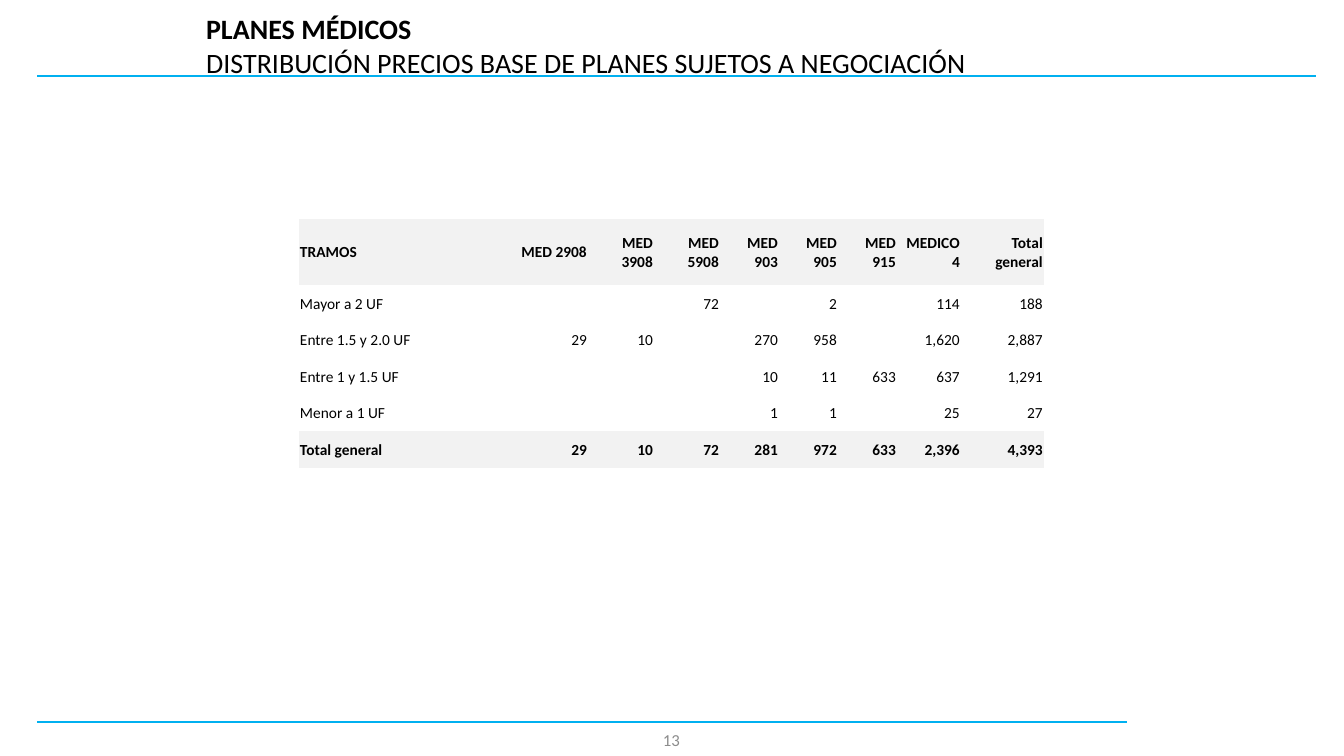
import pptx
import pptx.util
import pptx.dml.color
import pptx.enum.shapes
import pptx.enum.text
import pptx.oxml
import pptx.oxml.ns

BLACK = pptx.dml.color.RGBColor(0x00, 0x00, 0x00)
GREY = pptx.dml.color.RGBColor(0x8C, 0x8C, 0x8C)
PALE = pptx.dml.color.RGBColor(0xF2, 0xF2, 0xF2)
CYAN = pptx.dml.color.RGBColor(0x00, 0xB0, 0xF0)

ALIGN = pptx.enum.text.PP_ALIGN
MIDDLE = pptx.enum.text.MSO_ANCHOR.MIDDLE
NO_STYLE_NO_GRID = "{2D5ABB26-0587-4C30-8999-92F81FD0307C}"
EMU_PER_PX = 914400 / 100.8

COLUMN_WIDTHS = [141, 148, 66, 66, 59, 59, 59, 64, 83]
ROW_HEIGHTS = [66, 37, 36, 37, 36, 37]
PRICE_ROWS = [
    ["TRAMOS", "MED 2908", "MED 3908", "MED 5908", "MED 903", "MED 905",
     "MED 915", "MEDICO 4", "Total general"],
    ["Mayor a 2 UF", "", "", "72", "", "2", "", "114", "188"],
    ["Entre 1.5 y 2.0 UF", "29", "10", "", "270", "958", "", "1,620", "2,887"],
    ["Entre 1 y 1.5 UF", "", "", "", "10", "11", "633", "637", "1,291"],
    ["Menor a 1 UF", "", "", "", "1", "1", "", "25", "27"],
    ["Total general", "29", "10", "72", "281", "972", "633", "2,396", "4,393"],
]


def px(length):
    return pptx.util.Emu(round(length * EMU_PER_PX))


def write(paragraph, text, size, bold=False, color=BLACK, align=ALIGN.LEFT,
          font="Calibri"):
    """Append a formatted run to the paragraph."""
    paragraph.alignment = align
    run = paragraph.add_run()
    run.text = text
    run.font.name = font
    run.font.size = pptx.util.Pt(size)
    run.font.bold = bold
    run.font.color.rgb = color


class SlideBuilder:
    def __init__(self, slide, rule_color=CYAN, band_color=PALE):
        self.slide = slide
        self.rule_color = rule_color
        self.band_color = band_color

    def rule(self, left, right, y):
        """Draw a horizontal line."""
        line = self.slide.shapes.add_connector(
            pptx.enum.shapes.MSO_CONNECTOR.STRAIGHT,
            px(right), px(y), px(left), px(y))
        line.line.color.rgb = self.rule_color
        line.line.width = pptx.util.Pt(1.5)
        line.element.spPr.append(pptx.oxml.parse_xml(
            "<a:effectLst %s/>" % pptx.oxml.ns.nsdecls("a")))

    def title(self, heading, subheading, left, top, width, height):
        title = self.slide.shapes.title
        title.left, title.top = px(left), px(top)
        title.width, title.height = px(width), px(height)
        frame = title.text_frame
        frame.word_wrap = True
        frame.auto_size = pptx.enum.text.MSO_AUTO_SIZE.NONE
        frame.vertical_anchor = MIDDLE
        paragraph = frame.paragraphs[0]
        write(paragraph, heading, 20, bold=True)
        paragraph.add_line_break()
        write(paragraph, subheading, 20)

    def page_number(self, number, left, top, width, height):
        box = self.slide.shapes.add_textbox(
            px(left), px(top), px(width), px(height))
        frame = box.text_frame
        frame.word_wrap = True
        frame.vertical_anchor = MIDDLE
        write(frame.paragraphs[0], number, 12, color=GREY, align=ALIGN.CENTER)

    def table(self, rows, widths, heights, left, top):
        """Add a table whose first and last rows are shaded and bold."""
        holder = self.slide.shapes.add_table(
            len(rows), len(widths), px(left), px(top),
            px(sum(widths)), px(sum(heights)))
        style_tag = pptx.oxml.ns.qn("a:tableStyleId")
        next(holder.element.iter(style_tag)).text = NO_STYLE_NO_GRID
        table = holder.table
        table.first_row = table.horz_banding = False
        for column, width in zip(table.columns, widths):
            column.width = px(width)
        for row, height in zip(table.rows, heights):
            row.height = px(height)
        for r, values in enumerate(rows):
            shaded = r in (0, len(rows) - 1)
            for c, value in enumerate(values):
                self.cell(table.cell(r, c), value, shaded,
                          ALIGN.RIGHT if c else ALIGN.LEFT)

    def cell(self, cell, value, shaded, align):
        cell.margin_left = cell.margin_top = cell.margin_right = px(1)
        cell.margin_bottom = 0
        cell.vertical_anchor = MIDDLE
        if shaded:
            cell.fill.solid()
            cell.fill.fore_color.rgb = self.band_color
        else:
            cell.fill.background()
        if value:
            write(cell.text_frame.paragraphs[0], value, 11, bold=shaded,
                  align=align)


def main():
    deck = pptx.Presentation()
    deck.slide_width, deck.slide_height = px(1344), px(756)
    title_only = deck.slide_layouts[5]
    builder = SlideBuilder(deck.slides.add_slide(title_only))
    builder.rule(37, 1127, 722)
    builder.rule(37, 1316, 76)
    builder.table(PRICE_ROWS, COLUMN_WIDTHS, ROW_HEIGHTS, 299, 219)
    builder.title("PLANES MÉDICOS",
                  "DISTRIBUCIÓN PRECIOS BASE DE PLANES SUJETOS A NEGOCIACIÓN",
                  196, 13, 930, 64)
    builder.page_number("13", 515, 720, 313, 40)
    deck.save("out.pptx")


if __name__ == "__main__":
    main()
